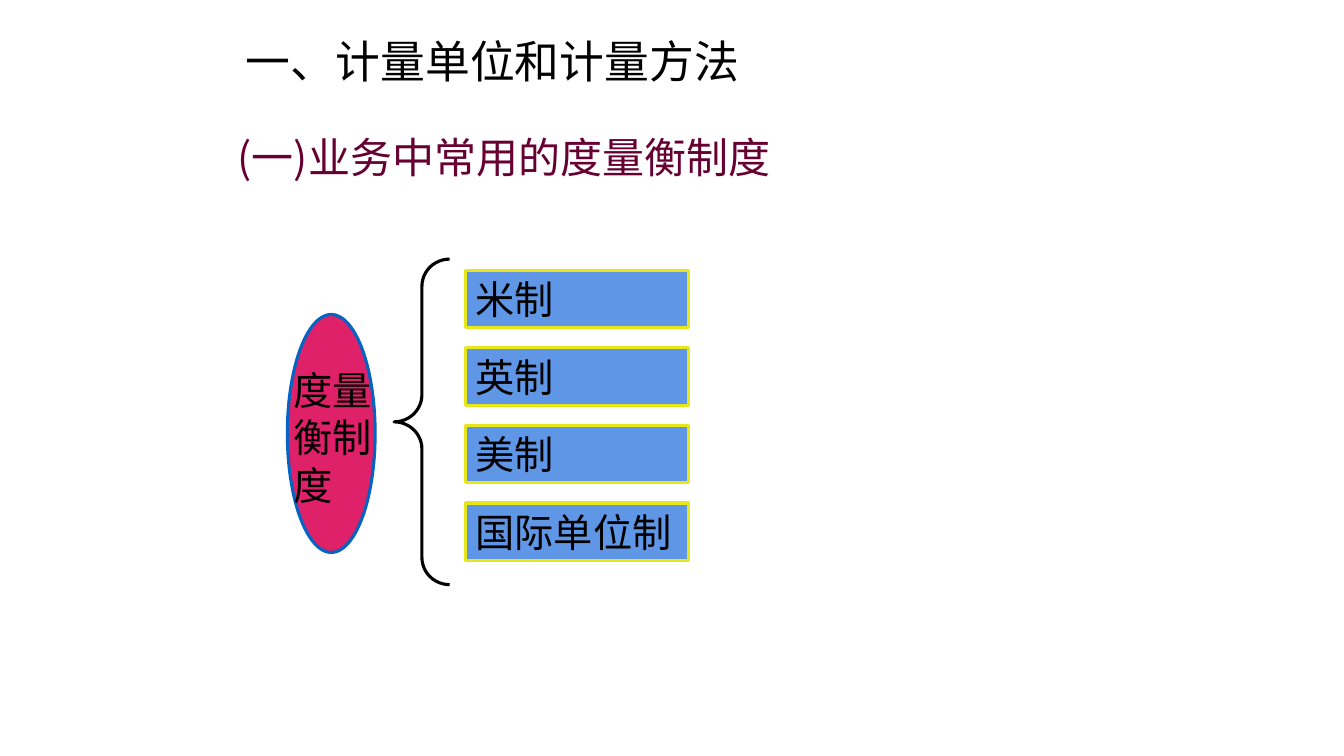
from pptx import Presentation
from pptx.dml.color import RGBColor
from pptx.enum.shapes import MSO_SHAPE
from pptx.enum.text import MSO_ANCHOR, PP_ALIGN
from pptx.oxml.ns import qn
from pptx.util import Inches, Pt
from lxml import etree

BLACK = RGBColor(0x00, 0x00, 0x00)
PLUM = RGBColor(0x66, 0x00, 0x33)
PINK = RGBColor(0xDF, 0x21, 0x69)
DEEP_BLUE = RGBColor(0x05, 0x63, 0xC1)
SKY_BLUE = RGBColor(0x60, 0x96, 0xE6)
YELLOW = RGBColor(0xE6, 0xE6, 0x1A)
ELLIPSE = MSO_SHAPE.OVAL
BRACE = MSO_SHAPE.LEFT_BRACE
RECTANGLE = MSO_SHAPE.RECTANGLE
MIDDLE = MSO_ANCHOR.MIDDLE
LEFT = PP_ALIGN.LEFT

LATIN = "Arial"
CHINESE = "Noto Sans CJK SC"
SYSTEMS = ["米制", "英制", "美制", "国际单位制"]
FIRST_ROW, ROW_STEP = 35.73, 10.27


class SlideBuilder:
    columns = rows = 100
    body_size = 28
    line_width = Pt(2.25)

    def __init__(self, deck):
        self.column = deck.slide_width / self.columns
        self.row = deck.slide_height / self.rows
        self.slide = deck.slides.add_slide(deck.slide_layouts[5])
        self.shapes = self.slide.shapes

    def place(self, left, top, width, height):
        return (round(left * self.column), round(top * self.row),
                round(width * self.column), round(height * self.row))

    def fill_text(self, frame, words, size, color=BLACK, font=LATIN, spacing=None):
        frame.word_wrap = True
        frame.vertical_anchor = MIDDLE
        paragraph = frame.paragraphs[0]
        paragraph.alignment = LEFT
        paragraph.line_spacing = spacing
        run = paragraph.add_run()
        run.text = words
        run.font.size = Pt(size)
        run.font.name = font
        run.font.color.rgb = color
        latin = run._r.find(qn("a:rPr")).find(qn("a:latin"))
        latin.addnext(etree.Element(qn("a:ea"), typeface=CHINESE))

    def title(self, words, area, size):
        heading = self.shapes.title
        heading.left, heading.top, heading.width, heading.height = self.place(*area)
        self.fill_text(heading.text_frame, words, size)

    def text(self, words, area, size, **style):
        box = self.shapes.add_textbox(*self.place(*area))
        self.fill_text(box.text_frame, words, size, **style)

    def start_group(self):
        self.shapes = self.slide.shapes.add_group_shape().shapes

    def shape(self, preset, area, line, fill=None, words=None):
        figure = self.shapes.add_shape(preset, *self.place(*area))
        figure.shadow.inherit = False
        figure.line.color.rgb = line
        figure.line.width = self.line_width
        if fill is None:
            figure.fill.background()
        else:
            figure.fill.solid()
            figure.fill.fore_color.rgb = fill
        if words:
            self.fill_text(figure.text_frame, words, self.body_size)
        return figure


def main():
    deck = Presentation()
    deck.slide_width, deck.slide_height = Inches(13.33), Inches(7.5)
    page = SlideBuilder(deck)
    page.title("一、计量单位和计量方法", (17.55, 3.73, 64.88, 8.53), 32)
    page.text("(一)业务中常用的度量衡制度", (16.95, 16.67, 67.35, 8), 30,
              color=PLUM, font=CHINESE)

    page.start_group()
    page.shape(ELLIPSE, (21.38, 41.6, 6.53, 31.47), DEEP_BLUE, PINK)
    page.text("度量衡制度", (21.08, 47.73, 7.65, 20.13), page.body_size,
              spacing=Pt(34))
    brace = page.shape(BRACE, (29.33, 34.27, 4.13, 43.07), BLACK)
    brace.adjustments[0] = 0.49
    for index, system in enumerate(SYSTEMS):
        area = (34.65, FIRST_ROW + index * ROW_STEP, 16.58, 7.6)
        page.shape(RECTANGLE, area, YELLOW, SKY_BLUE, system)

    deck.save("out.pptx")


if __name__ == "__main__":
    main()
